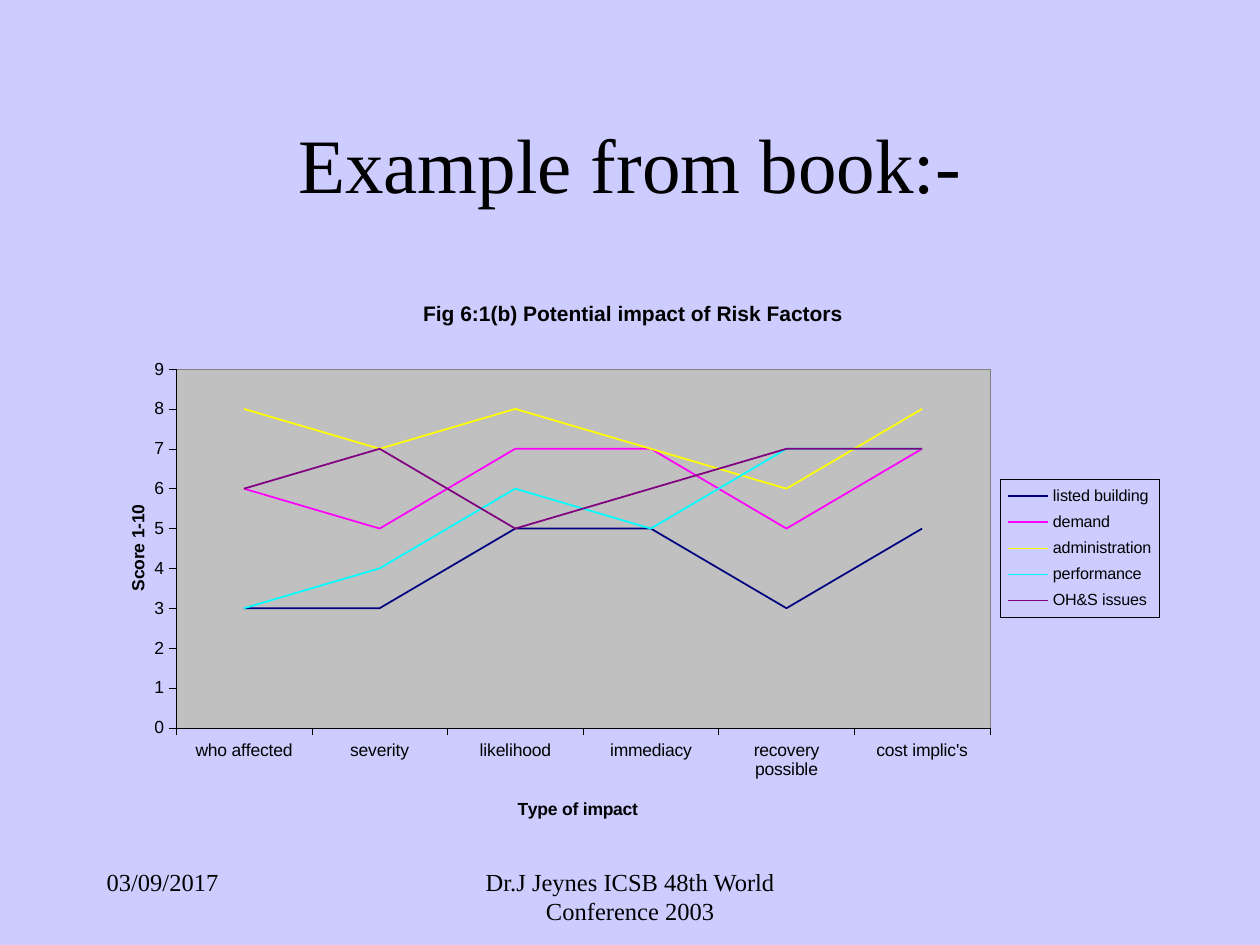
from lxml import etree
from pptx import Presentation
from pptx import util as u
from pptx.chart.data import CategoryChartData
from pptx.dml.color import RGBColor
from pptx.enum import chart as ch, text
from pptx.oxml import parse_xml
from pptx.oxml.ns import nsdecls, qn

COLORS = {
    "background": "CCCCFF", "ink": "000000", "plot": "C0C0C0", "frame": "808080",
    "listed building": "000080", "demand": "FF00FF", "administration": "FFFF00",
    "performance": "00FFFF", "OH&S issues": "800080",
}
SCORES = {
    "listed building": (3, 3, 5, 5, 3, 5),
    "demand": (6, 5, 7, 7, 5, 7),
    "administration": (8, 7, 8, 7, 6, 8),
    "performance": (3, 4, 6, 5, 7, 7),
    "OH&S issues": (6, 7, 5, 6, 7, 7),
}


def set_font(font, name, size, bold=False):
    font.name, font.size, font.bold = name, u.Pt(size), bold
    font.color.rgb = RGBColor.from_string(COLORS["ink"])


def place(element, index, **fractions):
    """Give a chart part a manual layout, as fractions of the chart area."""
    for old in element.findall(qn("c:layout")):
        element.remove(old)
    layout = etree.Element(qn("c:layout"))
    manual = etree.SubElement(layout, qn("c:manualLayout"))
    if "w" in fractions and element.tag == qn("c:plotArea"):
        etree.SubElement(manual, qn("c:layoutTarget")).set("val", "inner")
    for mode in ("xMode", "yMode"):
        etree.SubElement(manual, qn("c:" + mode)).set("val", "edge")
    for key, value in fractions.items():
        etree.SubElement(manual, qn("c:" + key)).set("val", str(value))
    element.insert(index, layout)


prs = Presentation()
prs.slide_width, prs.slide_height = u.Cm(25.4), u.Cm(19.05)
s = prs.slides.add_slide(prs.slide_layouts[6])
s.background.fill.solid()
s.background.fill.fore_color.rgb = RGBColor.from_string(COLORS["background"])

# Title and footer
LEFT, CENTER = text.PP_ALIGN.LEFT, text.PP_ALIGN.CENTER
TOP, MIDDLE = text.MSO_ANCHOR.TOP, text.MSO_ANCHOR.MIDDLE
for words, box, size, align, anchor in (
    ("Example from book:-", (1.9, 1.7, 21.6, 3.18), 44, CENTER, MIDDLE),
    ("03/09/2017", (1.9, 17.35, 5.28, 1.27), 14, LEFT, TOP),
    ("Dr.J Jeynes ICSB 48th World Conference 2003",
     (8.68, 17.35, 8.05, 1.27), 14, CENTER, TOP),
):
    tf = s.shapes.add_textbox(*map(u.Cm, box)).text_frame
    tf.word_wrap, tf.vertical_anchor = True, anchor
    p = tf.paragraphs[0]
    p.text, p.alignment = words, align
    set_font(p.font, "Times New Roman", size)

# Line chart
data = CategoryChartData()
data.categories = ("who affected", "severity", "likelihood", "immediacy",
                   "recovery possible", "cost implic's")
for name, values in SCORES.items():
    data.add_series(name, values)
chart = s.shapes.add_chart(ch.XL_CHART_TYPE.LINE, u.Cm(2.06), u.Cm(5.66),
                           u.Cm(21.31), u.Cm(11.13), data).chart
set_font(chart.font, "Arial", 10)
chart.plots[0].vary_by_categories = False
for series in chart.plots[0].series:
    series.smooth = False
    series.marker.style = ch.XL_MARKER_STYLE.NONE
    series.format.line.width = u.Pt(1)
    series.format.line.color.rgb = RGBColor.from_string(COLORS[series.name])

cat_axis, val_axis = chart.category_axis, chart.value_axis
for axis in (cat_axis, val_axis):
    axis.has_major_gridlines = False
    axis.major_tick_mark = ch.XL_TICK_MARK.OUTSIDE
    axis.minor_tick_mark = ch.XL_TICK_MARK.NONE
    axis.format.line.width = u.Pt(0.25)
    axis.format.line.color.rgb = RGBColor.from_string(COLORS["ink"])
    set_font(axis.tick_labels.font, "Arial", 10)
val_axis.minimum_scale, val_axis.maximum_scale, val_axis.major_unit = 0, 9, 1

for owner, words, size, x, y in (
    (chart, "Fig 6:1(b) Potential impact of Risk Factors", 12, 0.3, 0.03),
    (cat_axis, "Type of impact", 10, 0.39, 0.93),
    (val_axis, "Score 1-10", 10, 0.02, 0.4),
):
    owner.has_title = True
    title = owner.chart_title if owner is chart else owner.axis_title
    p = title.text_frame.paragraphs[0]
    p.text = words
    set_font(p.font, "Arial", size, bold=True)
    place(title.text_frame._txBody.getparent().getparent(), 1, x=x, y=y)
val_axis.axis_title.text_frame._txBody.find(qn("a:bodyPr")).set("rot", "-5400000")

chart.has_legend = True
legend = chart.legend
legend.position = ch.XL_LEGEND_POSITION.RIGHT
legend.include_in_layout = False
set_font(legend.font, "Arial", 9.2)
place(legend._element, 1, x=0.85, y=0.36, w=0.15, h=0.25)

plot_area = chart._chartSpace.chart.plotArea
place(plot_area, 0, x=0.07, y=0.16, w=0.77, h=0.65)


# Fill and outline of the plot area and the legend
for fill, line in (("plot", "frame"), ("background", "ink")):
    sp_pr = parse_xml(
        f'<c:spPr {nsdecls("c", "a")}>'
        f'<a:solidFill><a:srgbClr val="{COLORS[fill]}"/></a:solidFill>'
        f'<a:ln w="3175"><a:solidFill><a:srgbClr val="{COLORS[line]}"/>'
        '</a:solidFill></a:ln></c:spPr>')
    if fill == "plot":
        plot_area.append(sp_pr)
    else:
        legend._element.find(qn("c:txPr")).addprevious(sp_pr)

prs.save("out.pptx")
